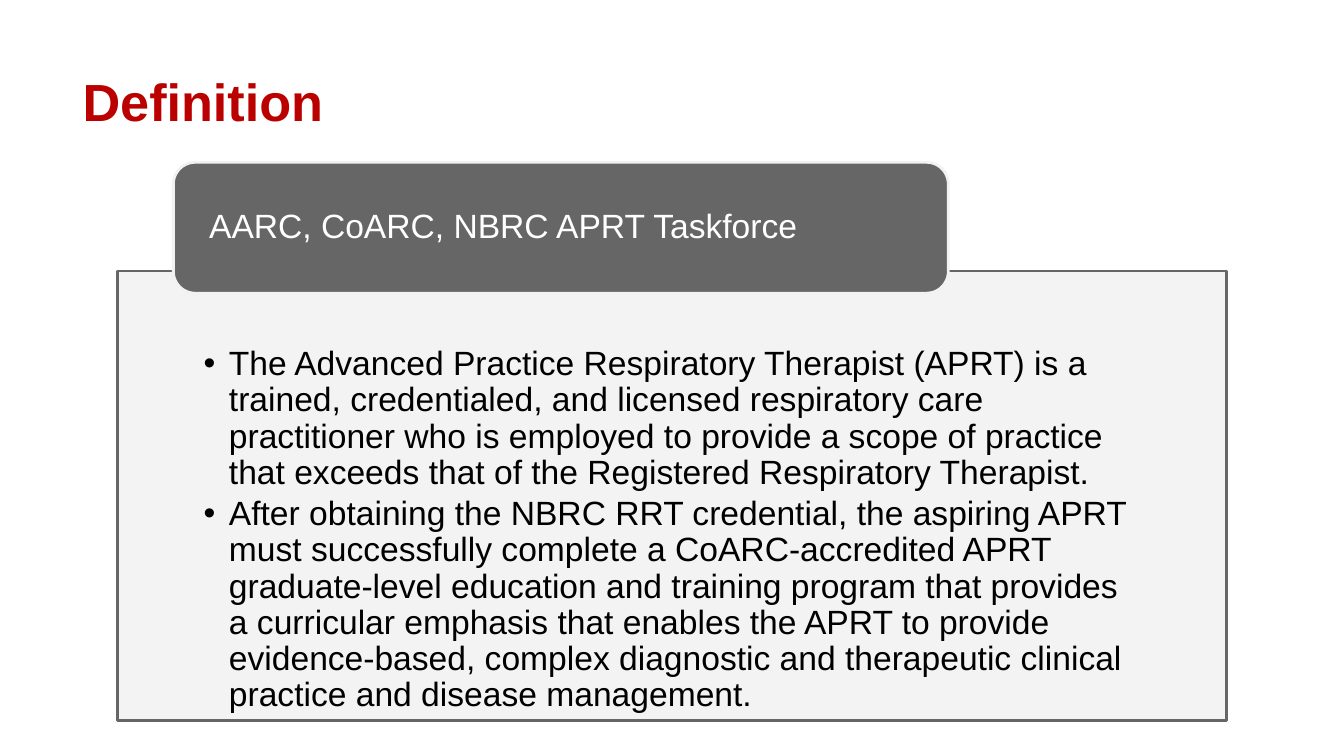
from dataclasses import dataclass

from lxml.etree import SubElement
from pptx import Presentation
from pptx.dml.color import RGBColor
from pptx.enum.shapes import MSO_SHAPE as Shape
from pptx.enum.text import MSO_ANCHOR as Anchor, MSO_AUTO_SIZE as AutoSize, PP_ALIGN as Align
from pptx.oxml.ns import qn
from pptx.util import Cm, Pt


@dataclass(frozen=True)
class Theme:
    font: str = "Arial"
    red: str = "BB0000"
    gray: str = "666666"
    pale: str = "F2F2F2"
    white: str = "FFFFFF"
    black: str = "000000"
    title_size: float = 37.3
    text_size: float = 24
    line_width: float = 2


class SlideBuilder:
    """Adds themed elements to one slide."""

    def __init__(self, slide, theme):
        self.slide = slide
        self.theme = theme

    def place(self, shape, box):
        shape.left, shape.top, shape.width, shape.height = map(Cm, box)

    def paint(self, shape, fill, line):
        shape.fill.solid()
        shape.fill.fore_color.rgb = RGBColor.from_string(fill)
        shape.line.color.rgb = RGBColor.from_string(line)
        shape.line.width = Pt(self.theme.line_width)

    def set_frame(self, shape, anchor, left, top, bottom):
        frame = shape.text_frame
        frame.word_wrap = True
        frame.auto_size = AutoSize.NONE
        frame.vertical_anchor = anchor
        frame.margin_left = frame.margin_right = Cm(left)
        frame.margin_top, frame.margin_bottom = Cm(top), Cm(bottom)
        return frame

    def format_paragraph(self, paragraph, size, color, spacing=0.9, bold=False):
        paragraph.alignment = Align.LEFT
        paragraph.line_spacing = spacing
        paragraph.space_before = Pt(0)
        font = paragraph.font
        font.name, font.size, font.bold = self.theme.font, Pt(size), bold
        font.color.rgb = RGBColor.from_string(color)

    def add_bullet(self, paragraph):
        properties = paragraph._p.get_or_add_pPr()
        properties.set("marL", str(Cm(0.64)))
        properties.set("indent", str(-Cm(0.64)))
        bullet_color = SubElement(properties, qn("a:buClr"))
        SubElement(bullet_color, qn("a:srgbClr"), val=self.theme.black)
        SubElement(properties, qn("a:buFont"), typeface=self.theme.font)
        SubElement(properties, qn("a:buChar"), char="•")

    def title(self, text, box):
        title = self.slide.shapes.title
        self.place(title, box)
        frame = self.set_frame(title, Anchor.BOTTOM, 0.25, 0.13, 0.13)
        frame.text = text
        self.format_paragraph(frame.paragraphs[0], self.theme.title_size,
                              self.theme.red, spacing=0.85, bold=True)

    def bullet_panel(self, items, box):
        panel = self.slide.placeholders[1]
        self.place(panel, box)
        self.paint(panel, self.theme.pale, self.theme.gray)
        fill_color = panel._element.spPr.find(qn("a:solidFill"))[0]
        SubElement(fill_color, qn("a:alpha"), val="90000")
        frame = self.set_frame(panel, Anchor.TOP, 2.16, 1.9, 0.48)
        frame.text = "\n".join(items)
        for paragraph in frame.paragraphs:
            self.add_bullet(paragraph)
            self.format_paragraph(paragraph, self.theme.text_size, self.theme.black)
            paragraph.space_after = Pt(3.6)

    def header(self, text, box):
        header = self.slide.shapes.add_shape(Shape.ROUNDED_RECTANGLE, *map(Cm, box))
        header.shadow.inherit = False
        self.paint(header, self.theme.gray, self.theme.pale)
        frame = self.set_frame(header, Anchor.MIDDLE, 0.74, 0, 0)
        frame.text = text
        self.format_paragraph(frame.paragraphs[0], self.theme.text_size, self.theme.white)


def main():
    presentation = Presentation()
    presentation.slide_width, presentation.slide_height = Cm(33.87), Cm(19.05)
    slide = presentation.slides.add_slide(presentation.slide_layouts[1])
    builder = SlideBuilder(slide, Theme())
    builder.title("Definition", (1.83, 1.93, 30.71, 1.52))
    builder.bullet_panel([
        "The Advanced Practice Respiratory Therapist (APRT) is a trained, credentialed, "
        "and licensed respiratory care practitioner who is employed to provide a scope of "
        "practice that exceeds that of the Registered Respiratory Therapist.",
        "After obtaining the NBRC RRT credential, the aspiring APRT must successfully "
        "complete a CoARC-accredited APRT graduate-level education and training program "
        "that provides a curricular emphasis that enables the APRT to provide "
        "evidence-based, complex diagnostic and therapeutic clinical practice and "
        "disease management.",
    ], (2.97, 6.83, 27.94, 11.33))
    builder.header("AARC, CoARC, NBRC APRT Taskforce", (4.37, 4.09, 19.53, 3.3))
    presentation.save("out.pptx")


if __name__ == "__main__":
    main()
